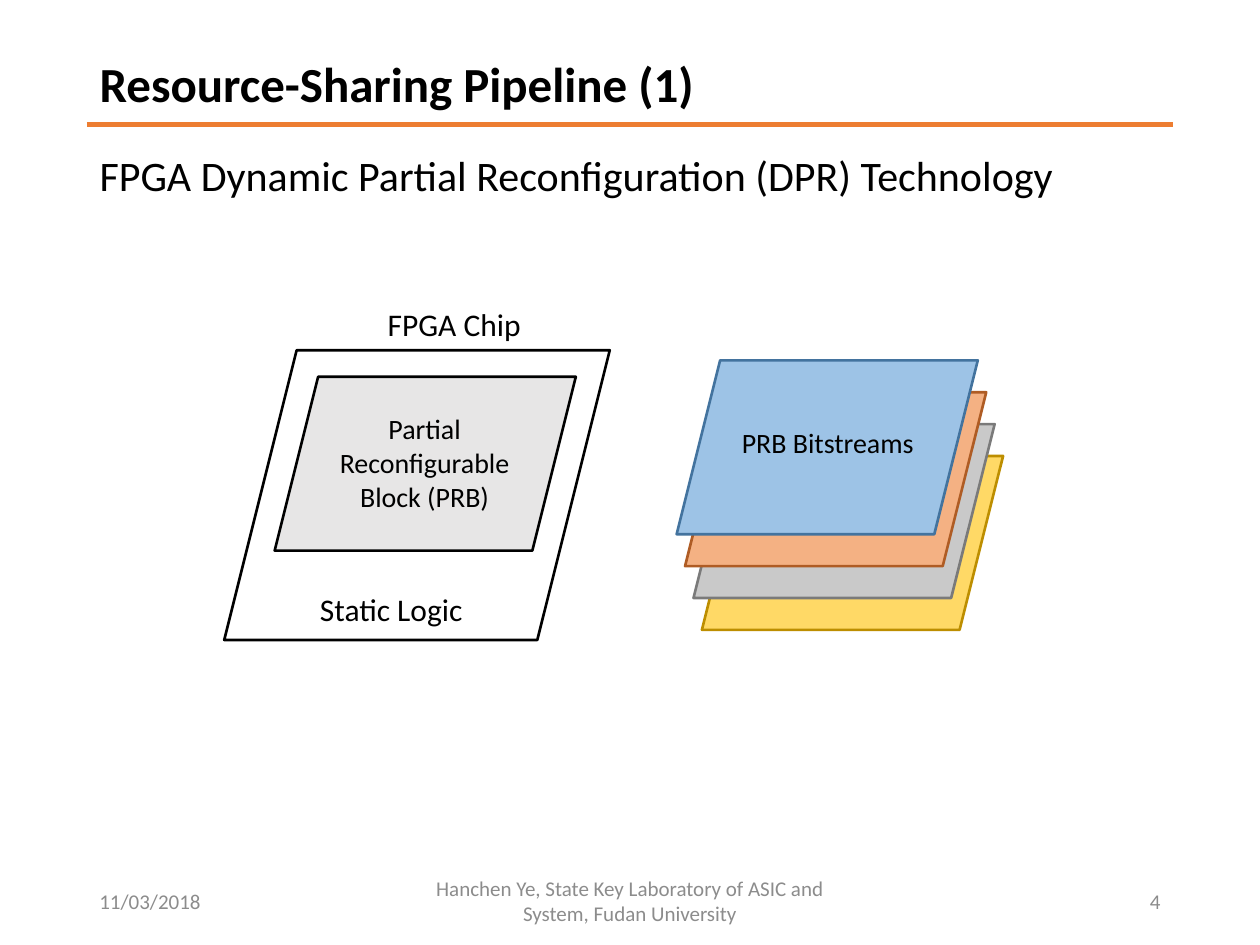
"""Build the slide on FPGA dynamic partial reconfiguration."""
from lxml.etree import SubElement
from pptx import Presentation
from pptx.dml.color import RGBColor
from pptx.enum.shapes import MSO_CONNECTOR, MSO_SHAPE
from pptx.enum.text import MSO_ANCHOR, MSO_AUTO_SIZE, PP_ALIGN
from pptx.oxml.ns import qn
from pptx.util import Inches, Pt

COLORS = {
    "black": "000000", "white": "FFFFFF", "footer": "8C8C8C",
    "rule": "ED7D31", "block": "E7E6E6",
    "blue": "9DC3E6", "blue_edge": "43739E",
    "orange": "F4B183", "orange_edge": "AF5C24",
    "gray": "C9C9C9", "gray_edge": "7A7A7A",
    "yellow": "FFD966", "yellow_edge": "BD8E00",
}


def write(box, text, size, color="black", align=PP_ALIGN.CENTER,
          anchor=MSO_ANCHOR.TOP, wrap=True, bold=False):
    frame = box.text_frame
    frame.word_wrap = wrap
    frame.auto_size = MSO_AUTO_SIZE.NONE
    frame.vertical_anchor = anchor
    frame.text = text
    para = frame.paragraphs[0]
    para.alignment = align
    para.font.name = "Calibri"
    para.font.size = Pt(size)
    para.font.bold = bold
    para.font.color.rgb = RGBColor.from_string(COLORS[color])
    return para


def add_plate(left, top, width, height, fill, edge):
    plate = page.shapes.add_shape(
        MSO_SHAPE.PARALLELOGRAM, Inches(left), Inches(top), Inches(width), Inches(height))
    plate.shadow.inherit = False
    plate.fill.solid()
    plate.fill.fore_color.rgb = RGBColor.from_string(COLORS[fill])
    plate.line.color.rgb = RGBColor.from_string(COLORS[edge])
    plate.line.width = Pt(1.5)


deck = Presentation()
deck.slide_width, deck.slide_height = Inches(10), Inches(7.5)
page = deck.slides.add_slide(deck.slide_layouts[1])

rule = page.shapes.add_connector(
    MSO_CONNECTOR.STRAIGHT, Inches(0.69), Inches(0.99), Inches(9.31), Inches(0.99))
rule.line.color.rgb = RGBColor.from_string(COLORS["rule"])
rule.line.width = Pt(3)
SubElement(rule.element.spPr, qn("a:effectLst"))

title, body = page.shapes.title, page.placeholders[1]
for holder, top in ((title, 0.4), (body, 1.18)):
    holder.left, holder.top = Inches(0.69), Inches(top)
    holder.width, holder.height = Inches(8.62), Inches(0.58)
heading = write(title, "Resource-Sharing Pipeline (1)", 28,
                align=PP_ALIGN.LEFT, anchor=MSO_ANCHOR.MIDDLE, bold=True)
topic = write(body, "FPGA Dynamic Partial Reconfiguration (DPR) Technology", 24,
              align=PP_ALIGN.LEFT)
heading.line_spacing = topic.line_spacing = 0.9
topic.space_before = Pt(10)
properties = topic._p.get_or_add_pPr()
properties.set("marL", "0")
properties.set("indent", "0")
SubElement(properties, qn("a:buNone"))

add_plate(1.78, 2.78, 3.06, 2.3, "white", "black")
add_plate(2.18, 2.99, 2.39, 1.38, "block", "black")
for depth, color in reversed(list(enumerate(("blue", "orange", "gray", "yellow")))):
    add_plate(5.37 + 0.067 * depth, 2.86 + 0.253 * depth, 2.39, 1.38, color, color + "_edge")

labels = (
    ("FPGA Chip", 2.97, 2.37, 1.27, 0.4, 18, False),
    ("Static Logic", 2.43, 4.63, 1.35, 0.4, 18, False),
    ("Partial Reconfigurable Block (PRB)", 2.57, 3.22, 1.6, 0.91, 16, True),
    ("PRB Bitstreams", 5.77, 3.33, 1.6, 0.37, 16, True),
)
for text, left, top, width, height, size, wrap in labels:
    box = page.shapes.add_textbox(Inches(left), Inches(top), Inches(width), Inches(height))
    write(box, text, size, wrap=wrap)

footers = (
    ("11/03/2018", 0.69, 2.25, PP_ALIGN.LEFT),
    ("Hanchen Ye, State Key Laboratory of ASIC and System, Fudan University",
     3.31, 3.38, PP_ALIGN.CENTER),
    ("4", 7.06, 2.25, PP_ALIGN.RIGHT),
)
for text, left, width, align in footers:
    box = page.shapes.add_textbox(Inches(left), Inches(6.95), Inches(width), Inches(0.4))
    write(box, text, 12, "footer", align, MSO_ANCHOR.MIDDLE)

deck.save("out.pptx")
